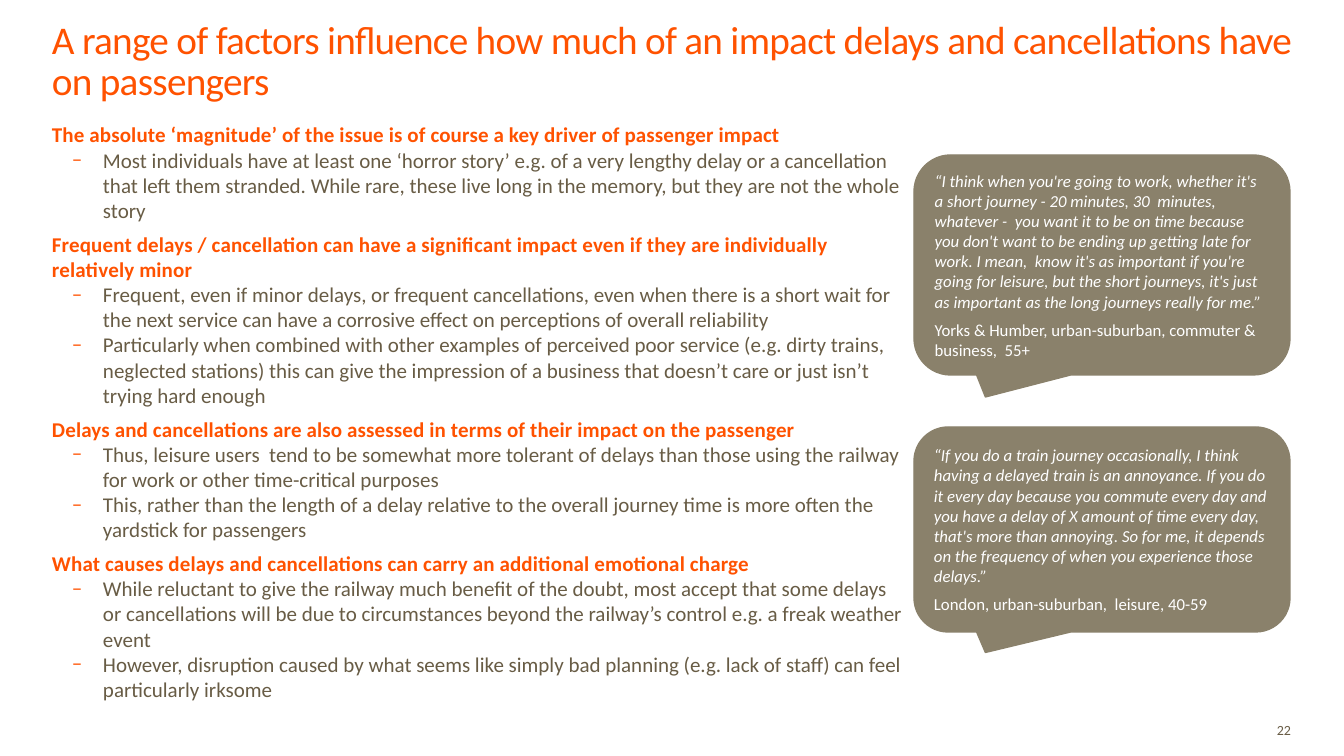
from dataclasses import dataclass

from lxml.etree import SubElement
from pptx import Presentation
from pptx.dml.color import RGBColor
from pptx.enum.shapes import MSO_SHAPE as Shape
from pptx.enum.text import MSO_ANCHOR as Anchor, MSO_AUTO_SIZE as AutoSize, PP_ALIGN as Align
from pptx.oxml.ns import qn
from pptx.util import Pt

EMU_PER_PX = 914400 / 100.8


@dataclass(frozen=True)
class Theme:
    font: str = "Calibri"
    accent: str = "FF5200"
    ink: str = "685C45"
    bubble: str = "8A816B"
    light: str = "FFFFFF"
    title_size: int = 28
    body_size: int = 15
    quote_size: int = 12
    number_size: int = 10


THEME = Theme()

TITLE = (
    "A range of factors influence how much of an impact delays and "
    "cancellations have on passengers"
)

SECTIONS = [
    ("The absolute ‘magnitude’ of the issue is of course a key driver of passenger impact", [
        "Most individuals have at least one ‘horror story’ e.g. of a very lengthy delay or a "
        "cancellation that left them stranded. While rare, these live long in the memory, but "
        "they are not the whole story",
    ]),
    ("Frequent delays / cancellation can have a significant impact even if they are "
     "individually relatively minor", [
        "Frequent, even if minor delays, or frequent cancellations, even when there is a short "
        "wait for the next service can have a corrosive effect on perceptions of overall "
        "reliability",
        "Particularly when combined with other examples of perceived poor service (e.g. dirty "
        "trains, neglected stations) this can give the impression of a business that doesn’t "
        "care or just isn’t trying hard enough",
    ]),
    ("Delays and cancellations are also assessed in terms of their impact on the passenger", [
        "Thus, leisure users  tend to be somewhat more tolerant of delays than those using the "
        "railway for work or other time-critical purposes",
        "This, rather than the length of a delay relative to the overall journey time is more "
        "often the yardstick for passengers",
    ]),
    ("What causes delays and cancellations can carry an additional emotional charge", [
        "While reluctant to give the railway much benefit of the doubt, most accept that some "
        "delays or cancellations will be due to circumstances beyond the railway’s control "
        "e.g. a freak weather event",
        "However, disruption caused by what seems like simply bad planning (e.g. lack of "
        "staff) can feel particularly irksome",
    ]),
]

QUOTES = [
    (155, 220,
     "“I think when you're going to work, whether it's a short journey - 20 minutes, 30  "
     "minutes, whatever -  you want it to be on time because you don't want to be ending up "
     "getting late for work. I mean,  know it's as important if you're going for leisure, but "
     "the short journeys, it's just as important as the long journeys really for me.”",
     "Yorks & Humber, urban-suburban, commuter & business,  55+"),
    (427, 205,
     "“If you do a train journey occasionally, I think having a delayed train is an "
     "annoyance. If you do it every day because you commute every day and you have a delay of "
     "X amount of time every day, that's more than annoying. So for me, it depends on the "
     "frequency of when you experience those delays.”",
     "London, urban-suburban,  leisure, 40-59"),
]


def px(length):
    return round(length * EMU_PER_PX)


def place(holder, left, top, width, height):
    holder.left, holder.top = px(left), px(top)
    holder.width, holder.height = px(width), px(height)


def frame_text(holder, anchor, inset=True):
    frame = holder.text_frame
    frame.word_wrap = True
    frame.auto_size = AutoSize.NONE
    frame.vertical_anchor = anchor
    if not inset:
        frame.margin_left = frame.margin_right = frame.margin_top = frame.margin_bottom = 0
    return frame


def next_paragraph(frame):
    first = frame.paragraphs[0]
    return frame.add_paragraph() if first.runs else first


def write(paragraph, text, size, color, align=Align.LEFT, after=0, bold=False,
          italic=False, tracking=0):
    paragraph.add_run().text = text
    paragraph.alignment = align
    paragraph.space_before = Pt(0)
    paragraph.space_after = Pt(after)
    font = paragraph.font
    font.name, font.size = THEME.font, Pt(size)
    font.bold, font.italic = bold, italic
    font.color.rgb = RGBColor.from_string(color)
    paragraph._p.pPr.get_or_add_defRPr().set("spc", str(tracking))


def set_bullet(paragraph, mark=None, indent=0, hanging=0):
    props = paragraph._p.get_or_add_pPr()
    props.set("marL", str(px(indent)))
    props.set("indent", str(-px(hanging)))
    if mark is None:
        SubElement(props, qn("a:buNone"))
        return
    SubElement(SubElement(props, qn("a:buClr")), qn("a:srgbClr")).set("val", THEME.accent)
    SubElement(props, qn("a:buFont")).set("typeface", THEME.font)
    SubElement(props, qn("a:buChar")).set("char", mark)


def fill_title(title):
    place(title, 52, 23, 1250, 80)
    headline = frame_text(title, Anchor.BOTTOM, inset=False).paragraphs[0]
    headline.line_spacing = Pt(29)
    write(headline, TITLE, THEME.title_size, THEME.accent, tracking=-50)


def fill_factors(body):
    place(body, 52, 122, 853, 607)
    frame = frame_text(body, Anchor.TOP, inset=False)
    for heading, points in SECTIONS:
        factor = next_paragraph(frame)
        set_bullet(factor)
        write(factor, heading, THEME.body_size, THEME.accent, bold=True, tracking=10)
        for point in points:
            detail = next_paragraph(frame)
            detail.level = 1
            set_bullet(detail, "–", indent=51, hanging=31)
            write(detail, point, THEME.body_size, THEME.ink,
                  after=6 if point == points[-1] else 0)


def add_quote(slide, top, height, quote, speaker):
    bubble = slide.shapes.add_shape(
        Shape.ROUNDED_RECTANGULAR_CALLOUT, px(914), px(top), px(376), px(height))
    bubble.shadow.inherit = False
    bubble.adjustments[0], bubble.adjustments[1] = -0.31, 0.6
    bubble.fill.solid()
    bubble.fill.fore_color.rgb = RGBColor.from_string(THEME.bubble)
    bubble.line.color.rgb = RGBColor.from_string(THEME.bubble)
    bubble.line.width = Pt(1)
    frame = frame_text(bubble, Anchor.MIDDLE)
    for words, italic in ((quote, True), (speaker, False)):
        write(next_paragraph(frame), words, THEME.quote_size, THEME.light,
              after=5.5, italic=italic)


def add_page_number(slide, number):
    corner = slide.shapes.add_textbox(px(1267), px(719), px(24), px(22))
    frame = frame_text(corner, Anchor.MIDDLE, inset=False)
    write(frame.paragraphs[0], number, THEME.number_size, THEME.ink, align=Align.RIGHT)


def main():
    deck = Presentation()
    deck.slide_width, deck.slide_height = px(1344), px(756)
    slide = deck.slides.add_slide(deck.slide_layouts[1])
    fill_title(slide.shapes.title)
    fill_factors(slide.placeholders[1])
    for quote in QUOTES:
        add_quote(slide, *quote)
    add_page_number(slide, "22")
    deck.save("out.pptx")


if __name__ == "__main__":
    main()
